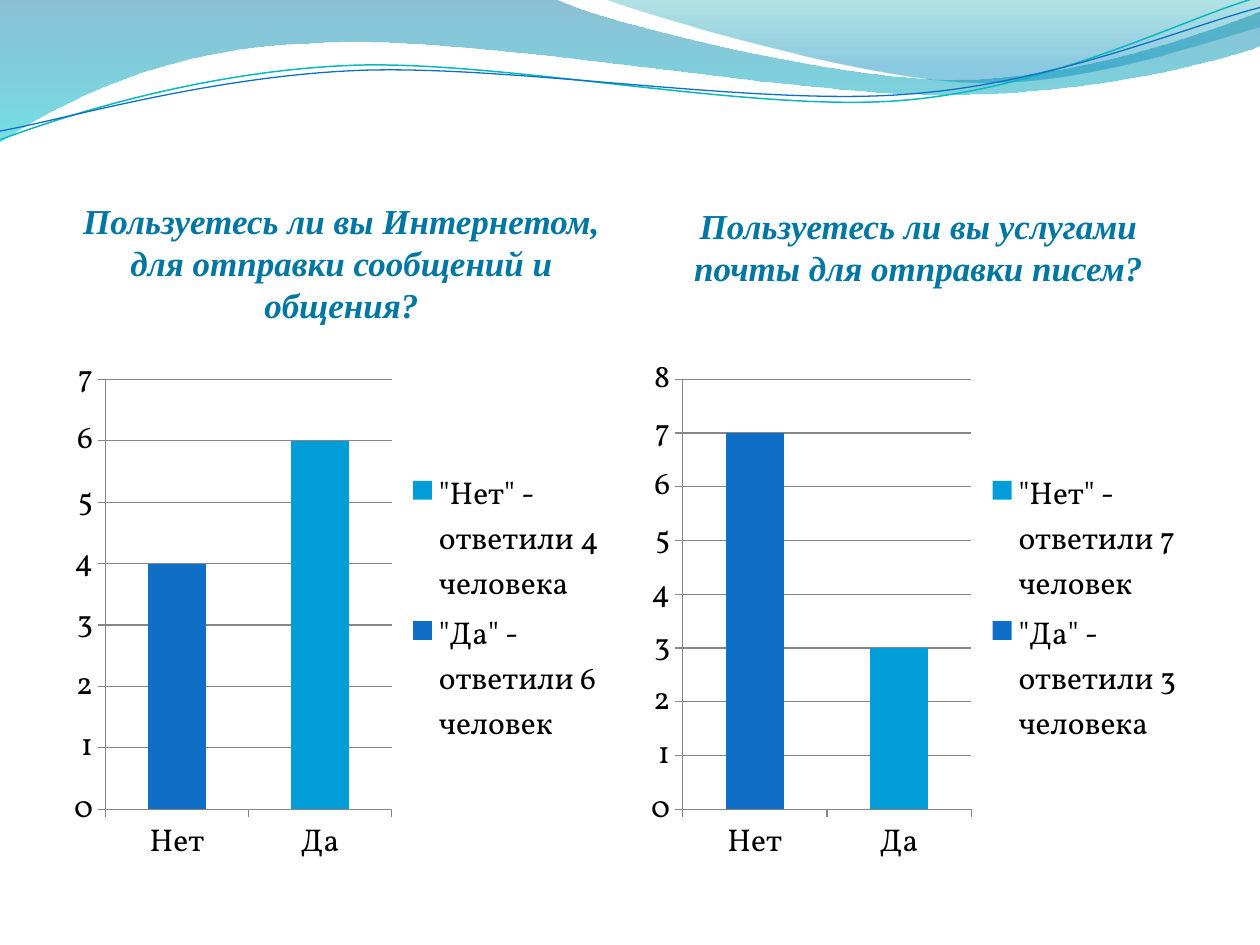
from lxml.etree import SubElement
from pptx import Presentation
from pptx.chart.data import CategoryChartData
from pptx.dml.color import RGBColor
from pptx.enum.chart import XL_CHART_TYPE as ChartType, XL_LEGEND_POSITION as LegendPosition
from pptx.enum.chart import XL_TICK_MARK as TickMark
from pptx.enum.text import MSO_ANCHOR as Anchor, PP_ALIGN as Align
from pptx.oxml.ns import qn
from pptx.util import Inches, Pt

COLORS = {"heading": "0076A3", "blue": "0F6FC6", "sky": "009DD9", "teal": "0AB8BF",
          "grid": "868686", "text": "000000"}
COLUMN_LEFTS = (0.5, 5.08)
COLUMN_WIDTH = 4.42
CHART_TOP, CHART_HEIGHT = 2.75, 4.21

# A wave is a start point followed by line ends (2 numbers) and Bézier curves (6 numbers).
BACK_WAVE = [(0, 0), (4.4, -0.01), (4.76, 0.17, 6.64, 0.63, 7.58, 0.63),
             (8.53, 0.63, 9.58, 0.26, 10, 0.09), (10.01, 0.36),
             (9.83, 0.44, 8.7, 0.76, 7.46, 0.75), (6.22, 0.75, 3.82, 0.28, 2.57, 0.34),
             (1.29, 0.36, 0.46, 0.83, -0.01, 1.13), (0, 0)]
FRONT_WAVE = [(4.79, -0.01), (5.09, 0.11, 6.82, 0.62, 7.69, 0.65),
              (8.56, 0.69, 9.61, 0.32, 10, 0.21), (10, 0), (4.79, -0.01)]
TEAL_WAVE = [(0, 1.11), (0.48, 0.93, 1.58, 0.57, 2.77, 0.52),
             (3.95, 0.47, 5.93, 0.89, 7.13, 0.8), (8.33, 0.71, 9.38, 0.15, 9.98, -0.02)]
BLUE_WAVE = [(0, 1.04), (0.47, 0.96, 1.64, 0.61, 2.83, 0.56),
             (4.03, 0.51, 5.97, 0.84, 7.17, 0.75), (8.36, 0.67, 9.41, 0.21, 10, 0.06)]

# Gradient stops: position, colour, opacity in percent
BACK_STOPS = [(0, "0074A1", 45), (1, "00C6CF", 55)]
FRONT_STOPS = [(0, "00A1A9", 30), (0.8, "008BBF", 45)]

# Heading, its top, values for no and yes, axis maximum, series names
QUESTIONS = [
    ("Пользуетесь ли вы Интернетом, для отправки сообщений и общения?", 1.41, (4, 6), 7,
     ('"Да" - ответили 6 человек', '"Нет" - ответили 4 человека')),
    ("Пользуетесь ли вы услугами почты для отправки писем?", 1.17, (7, 3), 8,
     ('"Да" - ответили 3 человека', '"Нет" - ответили 7 человек')),
]


def rgb(name):
    return RGBColor.from_string(COLORS[name])


def set_attributes(target, values):
    for name, value in values.items():
        setattr(target, name, value)


def bend_segments(shape, segments):
    """Turn the straight segments that have control points into Bézier curves."""
    lines = list(shape.element.iter(qn("a:lnTo")))
    for line, segment in zip(lines, segments):
        if len(segment) == 2:
            continue
        line.tag = qn("a:cubicBezTo")
        line.clear()
        for x, y in zip(segment[::2], segment[1::2]):
            point = SubElement(line, qn("a:pt"))
            point.set("x", str(Inches(x) - shape.left))
            point.set("y", str(Inches(y) - shape.top))


def add_wave(slide, wave, closed):
    start, *ends = [(Inches(segment[-2]), Inches(segment[-1])) for segment in wave]
    builder = slide.shapes.build_freeform(*start)
    builder.add_line_segments(ends, close=closed)
    shape = builder.convert_to_shape()
    bend_segments(shape, wave[1:])
    shape.shadow.inherit = False
    return shape


def add_filled_wave(slide, wave, stops):
    shape = add_wave(slide, wave, closed=True)
    shape.line.fill.background()
    shape.fill.gradient()
    shape.fill.gradient_angle = 270
    for stop, (position, color, _) in zip(shape.fill.gradient_stops, stops):
        stop.position = position
        stop.color.rgb = RGBColor.from_string(color)
    color_elements = list(shape.element.spPr.iter(qn("a:srgbClr")))
    for element, (_, _, opacity) in zip(color_elements, stops):
        SubElement(element, qn("a:alpha")).set("val", str(opacity * 1000))


def add_line_wave(slide, wave, color, width):
    shape = add_wave(slide, wave, closed=False)
    shape.fill.background()
    shape.line.color.rgb = rgb(color)
    shape.line.width = Pt(width)


def fill_heading(placeholder, text, left, top):
    set_attributes(placeholder, {
        "left": Inches(left), "top": Inches(top),
        "width": Inches(COLUMN_WIDTH), "height": Inches(CHART_TOP - top)})
    frame = placeholder.text_frame
    set_attributes(frame, {
        "text": text, "word_wrap": True, "vertical_anchor": Anchor.MIDDLE,
        "margin_left": Inches(0.05), "margin_right": Inches(0.05),
        "margin_top": 0, "margin_bottom": 0})
    paragraph = frame.paragraphs[0]
    paragraph.alignment = Align.CENTER
    font = paragraph.runs[0].font
    set_attributes(font, {"name": "Times New Roman", "size": Pt(20),
                          "bold": True, "italic": True})
    font.color.rgb = rgb("heading")


def add_answer_chart(slide, left, values, maximum, series_names):
    data = CategoryChartData()
    data.categories = ["Нет", "Да"]
    no_count, yes_count = values
    for name, counts in zip(series_names, ((no_count, None), (None, yes_count))):
        data.add_series(name, counts)
    chart = slide.shapes.add_chart(
        ChartType.COLUMN_STACKED, Inches(left), Inches(CHART_TOP),
        Inches(COLUMN_WIDTH), Inches(CHART_HEIGHT), data).chart
    set_attributes(chart, {"has_title": False, "has_legend": True})
    set_attributes(chart.font, {"name": "Vollkorn", "size": Pt(18)})
    chart.font.color.rgb = rgb("text")
    set_attributes(chart.legend, {"position": LegendPosition.RIGHT,
                                  "include_in_layout": False})
    plot = chart.plots[0]
    set_attributes(plot, {"gap_width": 150, "overlap": 100, "vary_by_categories": False})
    for series, color in zip(plot.series, ("blue", "sky")):
        series.format.fill.solid()
        series.format.fill.fore_color.rgb = rgb(color)
    value_axis = chart.value_axis
    set_attributes(value_axis, {"minimum_scale": 0, "maximum_scale": maximum,
                                "major_unit": 1, "has_major_gridlines": True})
    for axis in (chart.category_axis, value_axis):
        axis.major_tick_mark = TickMark.OUTSIDE
    for part in (chart.category_axis, value_axis, value_axis.major_gridlines):
        part.format.line.color.rgb = rgb("grid")
        part.format.line.width = Pt(0.75)


def main():
    presentation = Presentation()
    set_attributes(presentation, {"slide_width": Inches(10), "slide_height": Inches(7.5)})
    slide = presentation.slides.add_slide(
        presentation.slide_layouts.get_by_name("Comparison"))
    placeholders = {item.placeholder_format.idx: item for item in slide.placeholders}
    headings = [placeholders.pop(index) for index in (1, 3)]
    for placeholder in placeholders.values():
        placeholder.element.getparent().remove(placeholder.element)

    add_filled_wave(slide, BACK_WAVE, BACK_STOPS)
    add_filled_wave(slide, FRONT_WAVE, FRONT_STOPS)
    add_line_wave(slide, TEAL_WAVE, "teal", 0.85)
    add_line_wave(slide, BLUE_WAVE, "blue", 0.75)

    for heading in headings:
        heading.element.getparent().append(heading.element)  # in front of the waves
    for heading, left, question in zip(headings, COLUMN_LEFTS, QUESTIONS):
        text, top, values, maximum, series_names = question
        fill_heading(heading, text, left, top)
        add_answer_chart(slide, left, values, maximum, series_names)
    presentation.save("out.pptx")


if __name__ == "__main__":
    main()
